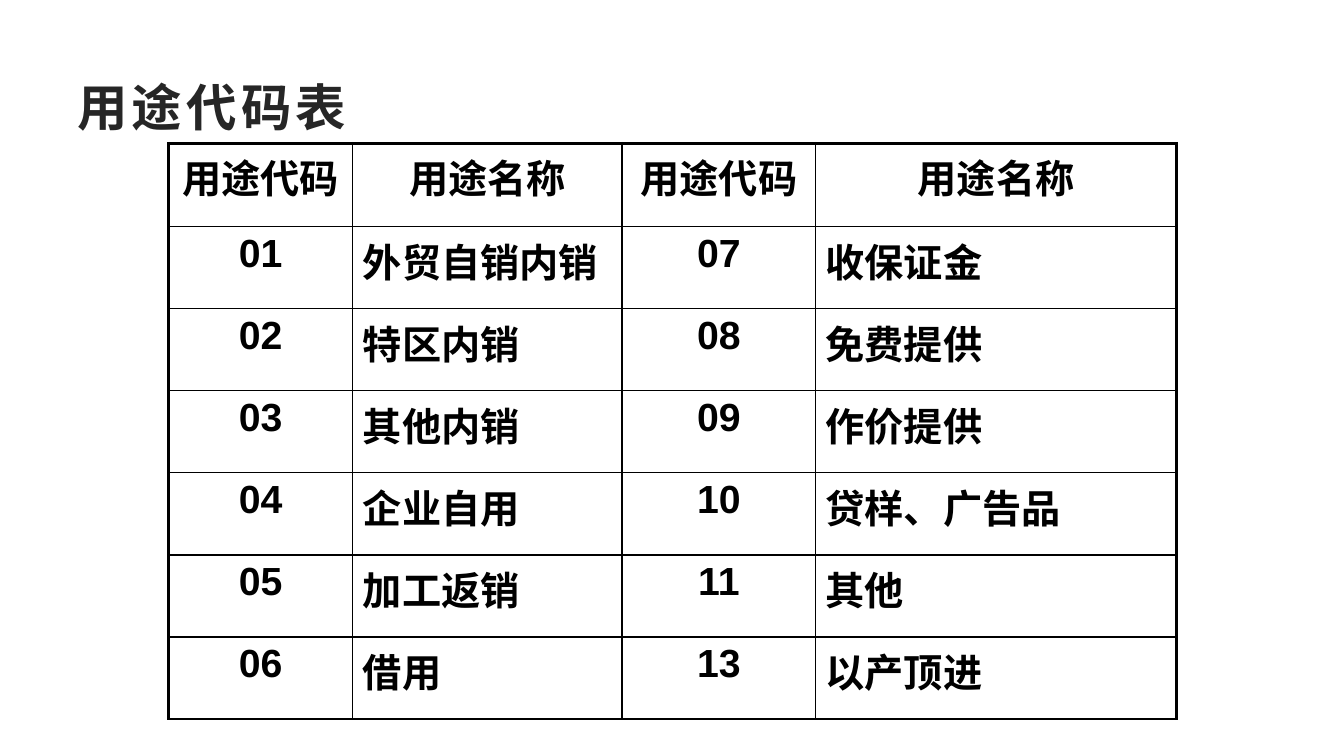
from pptx import Presentation, util as u
from pptx.dml.color import RGBColor
from pptx.enum import text
from pptx.oxml.ns import qn
from lxml import etree

TITLE = "用途代码表"
ROWS = [
    ("用途代码", "用途名称", "用途代码", "用途名称"),
    ("01", "外贸自销内销", "07", "收保证金"),
    ("02", "特区内销", "08", "免费提供"),
    ("03", "其他内销", "09", "作价提供"),
    ("04", "企业自用", "10", "贷样、广告品"),
    ("05", "加工返销", "11", "其他"),
    ("06", "借用", "13", "以产顶进"),
]
COL_WIDTHS = [1.83, 2.67, 1.92, 3.58]
HEADER_HEIGHT, ROW_HEIGHT = 0.83, 0.814
COLORS = {"title": "262626", "ink": "000000"}
FONT = "Arial"
OUTER, INNER = 2.25, 1


def style(p, size, color):
    f = p.font
    f.name, f.size, f.bold = FONT, u.Pt(size), True
    f.color.rgb = RGBColor.from_string(COLORS[color])


def space_before(p, percent):
    """Set paragraph spacing relative to the text size."""
    spacing = etree.Element(qn("a:spcBef"))
    etree.SubElement(spacing, qn("a:spcPct"), val=str(percent * 1000))
    p._p.get_or_add_pPr().insert(0, spacing)


def set_borders(cell, widths):
    """Draw cell borders; widths are points for left, right, top, bottom."""
    tc_pr = cell._tc.get_or_add_tcPr()
    for i, (side, width) in enumerate(zip("LRTB", widths)):
        ln = etree.Element(qn(f"a:ln{side}"), w=str(u.Pt(width)))
        fill = etree.SubElement(ln, qn("a:solidFill"))
        etree.SubElement(fill, qn("a:srgbClr"), val=COLORS["ink"])
        tc_pr.insert(i, ln)


def add_title(s):
    sp = s.shapes.add_textbox(u.Inches(0.67), u.Inches(0.67), u.Inches(12), u.Inches(0.77))
    tf = sp.text_frame
    tf.word_wrap = True
    tf.vertical_anchor = text.MSO_ANCHOR.MIDDLE
    p = tf.paragraphs[0]
    r = p.add_run()
    r.text = TITLE
    style(p, 36, "title")
    r._r.get_or_add_rPr().set("spc", "300")


def add_code_table(s):
    heights = [HEADER_HEIGHT] + [ROW_HEIGHT] * (len(ROWS) - 1)
    frame = s.shapes.add_table(len(ROWS), len(COL_WIDTHS), u.Inches(1.67), u.Inches(1.42),
                               u.Inches(sum(COL_WIDTHS)), u.Inches(sum(heights)))
    table = frame.table
    table.first_row = table.horz_banding = False
    for column, width in zip(table.columns, COL_WIDTHS):
        column.width = u.Inches(width)
    last_row, last_col = len(ROWS) - 1, len(COL_WIDTHS) - 1
    for i, values in enumerate(ROWS):
        table.rows[i].height = u.Inches(heights[i])
        for j, value in enumerate(values):
            cell = table.cell(i, j)
            cell.text = value
            cell.fill.background()
            p = cell.text_frame.paragraphs[0]
            centred = i == 0 or j % 2 == 0
            p.alignment = text.PP_ALIGN.CENTER if centred else text.PP_ALIGN.LEFT
            style(p, 28, "ink")
            space_before(p, 20)
            edges = (j == 0, j == last_col, i == 0, i == last_row)
            set_borders(cell, [OUTER if edge else INNER for edge in edges])


def main():
    prs = Presentation()
    prs.slide_width, prs.slide_height = u.Inches(13.33), u.Inches(7.5)
    s = prs.slides.add_slide(prs.slide_layouts[6])
    add_title(s)
    add_code_table(s)
    prs.save("out.pptx")


if __name__ == "__main__":
    main()
